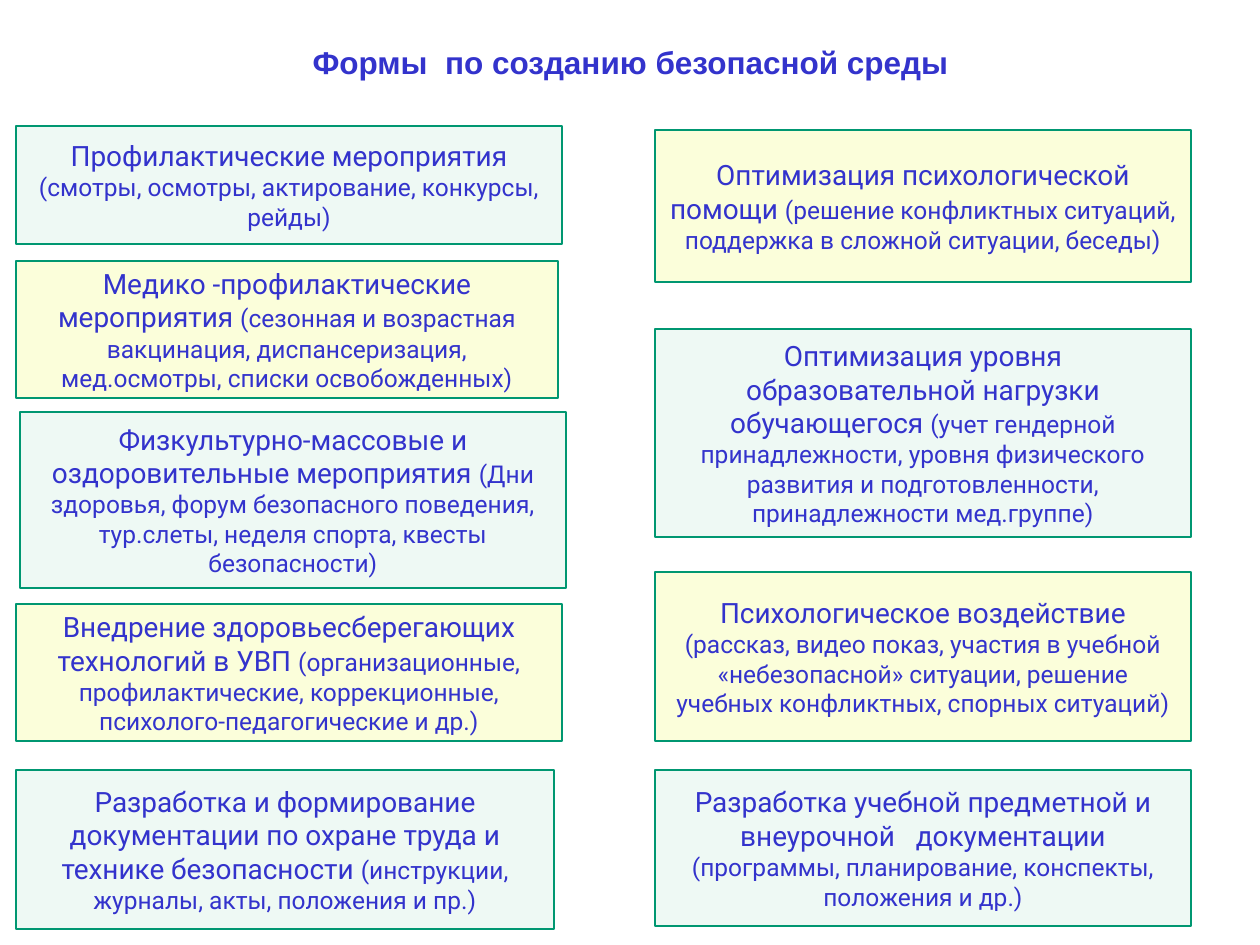
"""Build the slide on ways to create a safe environment."""
from pptx import Presentation
from pptx import util as u
from pptx.dml.color import RGBColor
from pptx.enum import shapes, text

TITLE = "Формы  по созданию безопасной среды"
LEFT = [
    ((16, 126, 546, 118), "Профилактические мероприятия ",
     "(смотры, осмотры, актирование, конкурсы, рейды)"),
    ((16, 261, 542, 137), "Медико -профилактические мероприятия ",
     "(сезонная и возрастная вакцинация, диспансеризация, мед.осмотры, "
     "списки освобожденных)"),
    ((20, 412, 546, 176), "Физкультурно-массовые и оздоровительные мероприятия ",
     "(Дни здоровья, форум безопасного поведения, тур.слеты, неделя спорта, "
     "квесты безопасности)"),
    ((16, 604, 546, 137), "Внедрение здоровьесберегающих технологий в УВП ",
     "(организационные, профилактические, коррекционные, "
     "психолого-педагогические и др.)"),
    ((16, 770, 538, 159), "Разработка и формирование документации по охране труда "
     "и технике безопасности ", "(инструкции, журналы, акты, положения и пр.)"),
]
RIGHT = [
    ((655, 130, 536, 152), "Оптимизация психологической помощи ",
     "(решение конфликтных ситуаций, поддержка в сложной ситуации, беседы)"),
    ((655, 329, 536, 208), "Оптимизация уровня образовательной нагрузки обучающегося ",
     "(учет гендерной принадлежности, уровня физического развития и "
     "подготовленности, принадлежности мед.группе)"),
    ((655, 572, 536, 169), "Психологическое воздействие ",
     "(рассказ, видео показ, участия в учебной «небезопасной» ситуации, "
     "решение учебных конфликтных, спорных ситуаций)"),
    ((655, 770, 536, 156), "Разработка учебной предметной и внеурочной   документации ",
     "(программы, планирование, конспекты, положения и др.)"),
]
THEME = {
    "ink": RGBColor.from_string("3333CC"),
    "line": RGBColor.from_string("009771"),
    "mint": RGBColor.from_string("EEF9F4"),
    "cream": RGBColor.from_string("FBFEDA"),
    "head": "Arial", "body": "Roboto",
    "title": 18, "lead": 16, "note": 14, "rule": 1,
}


def px(n):
    return u.Emu(round(n * 914400 / 126))


def style(para, face):
    para.alignment = text.PP_ALIGN.CENTER
    para.font.name = face
    para.font.color.rgb = THEME["ink"]


def add_title(slide):
    title = slide.shapes.title
    title.left, title.top, title.width, title.height = map(px, (25, 37, 1211, 89))
    frame = title.text_frame
    frame.text = TITLE
    frame.word_wrap = True
    frame.auto_size = text.MSO_AUTO_SIZE.NONE
    frame.vertical_anchor = text.MSO_ANCHOR.TOP
    para = frame.paragraphs[0]
    style(para, THEME["head"])
    para.font.size = u.Pt(THEME["title"])
    para.font.bold = True


def add_card(slide, place, lead, note, fill):
    card = slide.shapes.add_shape(shapes.MSO_SHAPE.RECTANGLE, *map(px, place))
    card.shadow.inherit = False
    card.fill.solid()
    card.fill.fore_color.rgb = THEME[fill]
    card.line.color.rgb = THEME["line"]
    card.line.width = u.Pt(THEME["rule"])
    frame = card.text_frame
    frame.word_wrap = True
    frame.vertical_anchor = text.MSO_ANCHOR.MIDDLE
    para = frame.paragraphs[0]
    style(para, THEME["body"])
    for words, size in ((lead, "lead"), (note, "note")):
        run = para.add_run()
        run.text = words
        run.font.size = u.Pt(THEME[size])


def main():
    deck = Presentation()
    deck.slide_width, deck.slide_height = px(1260), px(945)
    slide = deck.slides.add_slide(deck.slide_layouts[5])
    add_title(slide)
    for cards, fills in ((LEFT, ("mint", "cream")), (RIGHT, ("cream", "mint"))):
        for i, (place, lead, note) in enumerate(cards):
            add_card(slide, place, lead, note, fills[i % 2])
    deck.save("out.pptx")


if __name__ == "__main__":
    main()
